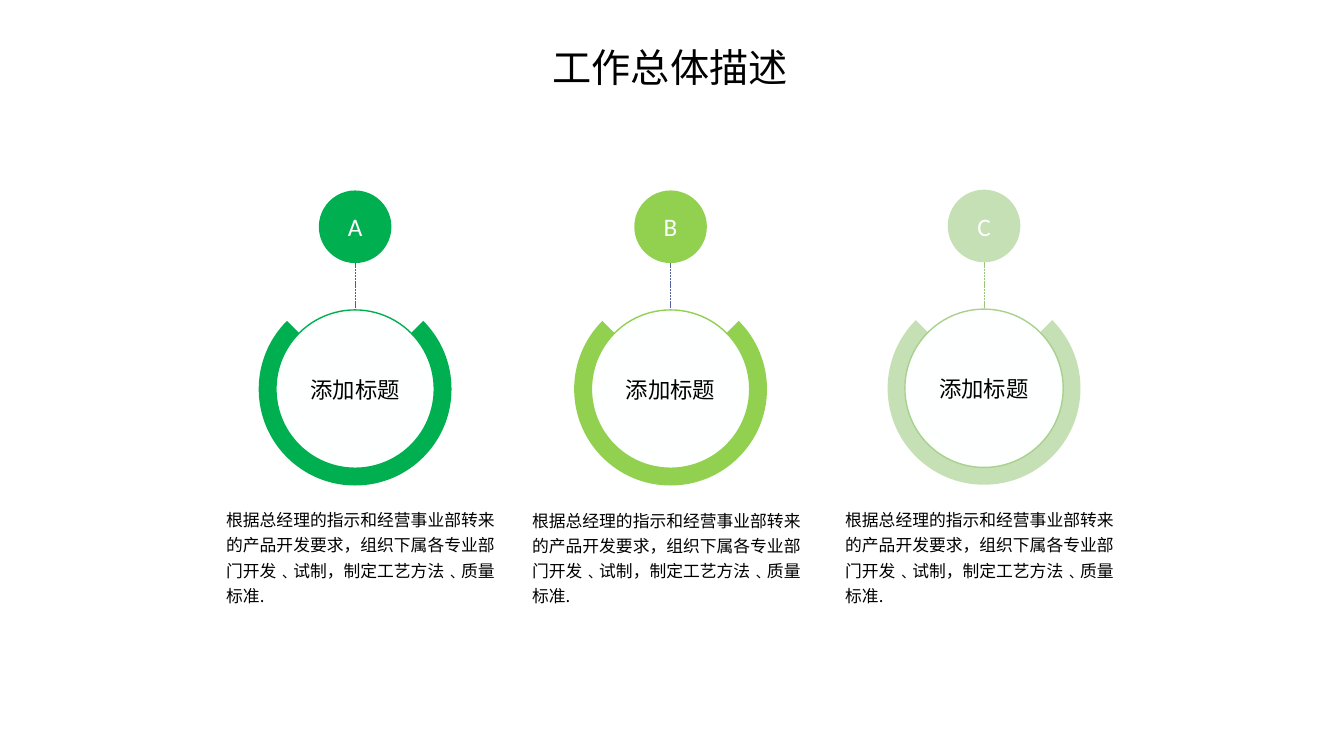
from dataclasses import dataclass
from math import cos, radians, sin, tan

from lxml import etree
from pptx import Presentation
from pptx.dml.color import RGBColor
from pptx.enum.dml import MSO_LINE
from pptx.enum.shapes import MSO_CONNECTOR, MSO_SHAPE
from pptx.enum.text import MSO_ANCHOR, MSO_AUTO_SIZE, PP_ALIGN
from pptx.oxml.ns import qn
from pptx.util import Cm, Pt

OVAL = MSO_SHAPE.OVAL
STRAIGHT = MSO_CONNECTOR.STRAIGHT
DASH = MSO_LINE.SQUARE_DOT
CENTER = PP_ALIGN.CENTER
MIDDLE = MSO_ANCHOR.MIDDLE
GROW = MSO_AUTO_SIZE.SHAPE_TO_FIT_TEXT
TOP_SITE = 0

COLORS = {
    "black": "000000", "white": "FEFFFF",
    "green": "00B050", "lime": "92D050", "pale": "C5E0B4", "sage": "A9D18E",
    "slate": "54636A", "indigo": "5463A0", "moss": "97C777",
}
CHINESE_FONT = "Noto Sans CJK SC"
LATIN_FONT = "Calibri"

TITLE = "工作总体描述"
DIAL_TITLE = "添加标题"
DESCRIPTION = "根据总经理的指示和经营事业部转来的产品开发要求，组织下属各专业部门开发﹑试制，制定工艺方法﹑质量标准."

BADGE_TOP, BADGE_SIZE = 4.8, 1.83
STEM_TOP = 6.35
DIAL_TOP, DIAL_SIZE = 7.81, 3.99
RING_RADIUS = 2.43
RING_ANGLES = [-45, 0, 90, 180, 225]
CAPTION_WIDTH, CAPTION_HEIGHT = 7.44, 2.82


@dataclass(frozen=True)
class Column:
    letter: str
    center: float
    rise: float
    caption_left: float
    caption_top: float
    fill: str
    outline: str
    stem: str


COLUMNS = [
    Column("A", 8.95, 0, 5.45, 12.6, "green", "green", "slate"),
    Column("B", 16.9, 0, 13.16, 12.61, "lime", "lime", "indigo"),
    Column("C", 24.8, 0.02, 21.05, 12.6, "pale", "sage", "moss"),
]


def rgb(name: str) -> RGBColor:
    return RGBColor.from_string(COLORS[name])


def write(box, text: str, size: float, font: str, color: str = "black"):
    para = box.text_frame.paragraphs[0]
    para.text = text
    para.font.size = Pt(size)
    para.font.color.rgb = rgb(color)
    para.font.name = font
    defaults = para._p.pPr.find(qn("a:defRPr"))
    etree.SubElement(defaults, qn("a:ea")).set("typeface", font)
    return para


def add_text(page, left: float, top: float, width: float, height: float,
             text: str, size: float, wrap: bool):
    box = page.shapes.add_textbox(Cm(left), Cm(top), Cm(width), Cm(height))
    box.text_frame.word_wrap = wrap
    box.text_frame.auto_size = GROW
    return write(box, text, size, CHINESE_FONT)


def add_circle(page, center: float, top: float, size: float, fill: str,
               text: str, text_size: float, font: str, text_color: str):
    circle = page.shapes.add_shape(
        OVAL, Cm(center - size / 2), Cm(top), Cm(size), Cm(size))
    circle.shadow.inherit = False
    circle.fill.solid()
    circle.fill.fore_color.rgb = rgb(fill)
    circle.line.fill.background()
    circle.text_frame.vertical_anchor = MIDDLE
    write(circle, text, text_size, font, text_color).alignment = CENTER
    return circle


def add_stem(page, column: Column):
    x = Cm(column.center)
    stem = page.shapes.add_connector(
        STRAIGHT, x, Cm(STEM_TOP), x, Cm(DIAL_TOP - column.rise))
    stem.line.color.rgb = rgb(column.stem)
    stem.line.width = Pt(0.5)
    stem.line.dash_style = DASH
    etree.SubElement(stem._element.spPr, qn("a:effectLst"))
    return stem


def rim_point(x: float, y: float, angle: float, pull: float = 0) -> tuple[int, int]:
    turn = radians(angle)
    return (Cm(x + RING_RADIUS * (cos(turn) - pull * sin(turn))),
            Cm(y + RING_RADIUS * (sin(turn) + pull * cos(turn))))


def bend_rim(ring, x: float, y: float) -> None:
    segments = list(ring._element.spPr.iter(qn("a:lnTo")))[1:]
    for segment, start, end in zip(segments, RING_ANGLES, RING_ANGLES[1:]):
        pull = 4 / 3 * tan(radians(end - start) / 4)
        segment_parent = segment.getparent()
        curve = etree.Element(qn("a:cubicBezTo"))
        for point in (rim_point(x, y, start, pull),
                      rim_point(x, y, end, -pull), rim_point(x, y, end)):
            etree.SubElement(curve, qn("a:pt"), x=str(point[0] - ring.left),
                             y=str(point[1] - ring.top))
        segment_parent.replace(segment, curve)


def add_ring(page, column: Column) -> None:
    x = column.center
    y = DIAL_TOP + DIAL_SIZE / 2 - column.rise
    outline = page.shapes.build_freeform(Cm(x), Cm(y))
    outline.add_line_segments(
        [rim_point(x, y, angle) for angle in RING_ANGLES], close=True)
    ring = outline.convert_to_shape()
    bend_rim(ring, x, y)
    ring.shadow.inherit = False
    ring.fill.solid()
    ring.fill.fore_color.rgb = rgb(column.fill)
    ring.line.fill.background()


def add_column(page, column: Column) -> None:
    stem = add_stem(page, column)
    add_ring(page, column)
    dial = add_circle(page, column.center, DIAL_TOP - column.rise, DIAL_SIZE,
                      "white", DIAL_TITLE, 16, CHINESE_FONT, "black")
    dial.line.color.rgb = rgb(column.outline)
    dial.line.width = Pt(1)
    stem.end_connect(dial, TOP_SITE)
    add_circle(page, column.center, BADGE_TOP - column.rise, BADGE_SIZE,
               column.fill, column.letter, 18, LATIN_FONT, "white")
    caption = add_text(page, column.caption_left, column.caption_top,
                       CAPTION_WIDTH, CAPTION_HEIGHT, DESCRIPTION, 12, True)
    caption.line_spacing = Pt(18)


def main() -> None:
    deck = Presentation()
    deck.slide_width, deck.slide_height = Cm(33.87), Cm(19.05)
    page = deck.slides.add_slide(deck.slide_layouts[6])
    for column in COLUMNS:
        add_column(page, column)
    add_text(page, 13.68, 0.97, 6.5, 1.45, TITLE, 28, False)
    deck.save("out.pptx")


if __name__ == "__main__":
    main()
